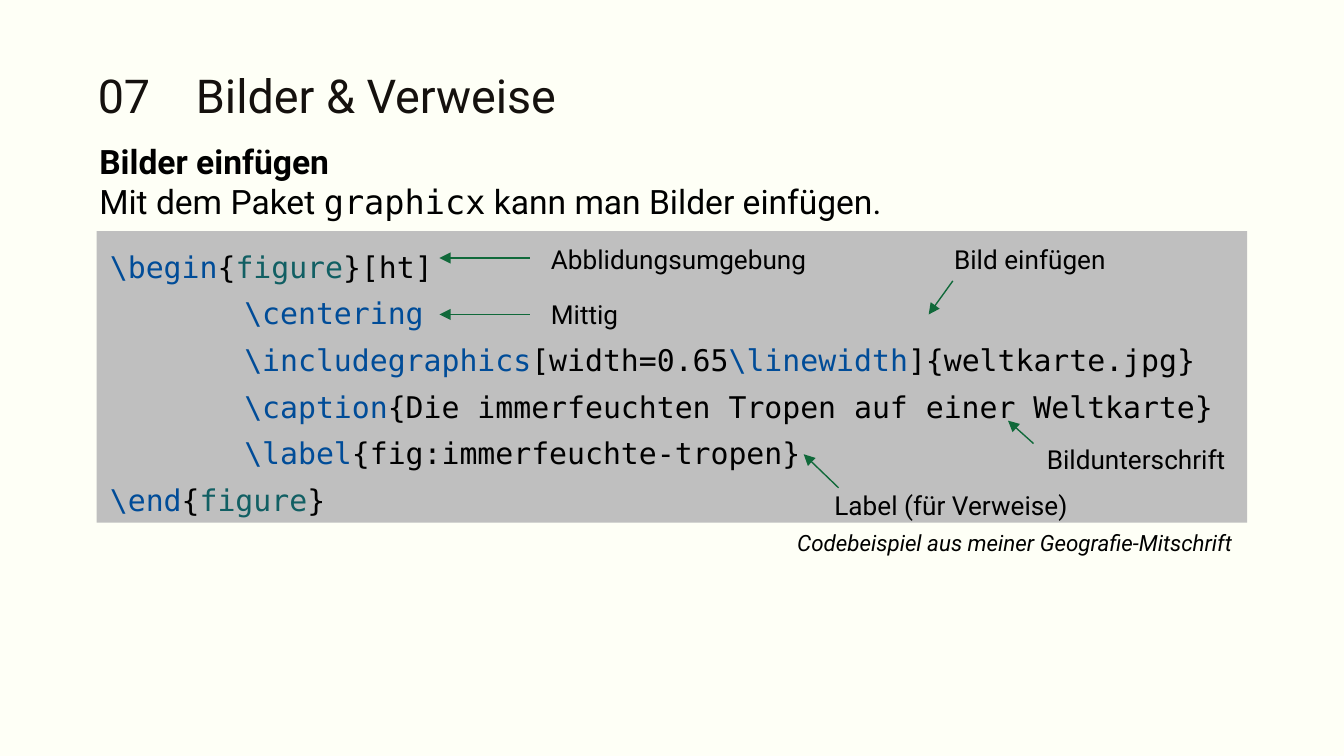
from lxml import etree
from pptx import Presentation
from pptx import util as u
from pptx.dml.color import RGBColor
from pptx.enum import shapes, text
from pptx.oxml import ns


class Theme:
    background = "FEFFF6"
    ink = "000000"
    heading = "15110E"
    panel = "BFBFBF"
    command = "004C98"
    environment = "115F63"
    arrow = "10693A"
    sans = "Roboto"
    mono = "DejaVu Sans Mono"
    title_size = 25
    body_size = 18
    code_size = 16
    label_size = 14
    source_size = 12


# Boxes are (left, top, width, height) in inches.
TITLES = [
    ("Bilder & Verweise", (1.36, 0.4, 7.71, 0.6)),
    ("07", (0.63, 0.4, 0.73, 0.6)),
]
SUBTITLE = "Bilder einfügen"
INTRO = [
    ("Mit dem Paket ", Theme.sans),
    ("graphicx", Theme.mono),
    (" kann man Bilder einfügen.", Theme.sans),
]
INTRO_BOX = (0.64, 1, 8.72, 0.71)
CODE_BOX = (0.72, 1.72, 8.56, 2.17)
CODE_TAB = 1
CODE = [
    [("\\begin", Theme.command), ("{", Theme.ink),
     ("figure", Theme.environment), ("}[ht]", Theme.ink)],
    [("\t\\centering", Theme.command)],
    [("\t\\includegraphics", Theme.command), ("[width=0.65", Theme.ink),
     ("\\linewidth", Theme.command), ("]{weltkarte.jpg}", Theme.ink)],
    [("\t\\caption", Theme.command),
     ("{Die immerfeuchten Tropen auf einer Weltkarte}", Theme.ink)],
    [("\t\\label", Theme.command), ("{fig:immerfeuchte-tropen}", Theme.ink)],
    [("\\end", Theme.command), ("{", Theme.ink),
     ("figure", Theme.environment), ("}", Theme.ink)],
]
SOURCE = "Codebeispiel aus meiner Geografie-Mitschrift"
SOURCE_BOX = (3.94, 3.89, 5.33, 0.3)
# Label, its left and top, arrow start, arrow tip
ANNOTATIONS = [
    ("Abblidungsumgebung", (4, 1.76), (3.94, 1.92), (3.27, 1.92)),
    ("Mittig", (4, 2.17), (3.94, 2.34), (3.27, 2.34)),
    ("Bild einfügen", (7, 1.76), (7.09, 2.09), (6.91, 2.34)),
    ("Bildunterschrift", (7.69, 3.25), (7.69, 3.3), (7.5, 3.13)),
    ("Label (für Verweise)", (6.11, 3.59), (6.24, 3.63), (5.98, 3.38)),
]
LABEL_SIZE = (2.35, 0.34)


def inches(values):
    return [u.Inches(value) for value in values]


def color(value):
    return RGBColor.from_string(value)


def set_font(font, size, name=Theme.sans, ink=Theme.ink):
    font.size = u.Pt(size)
    font.name = name
    font.color.rgb = color(ink)


def add_text(slide, box, content, size, ink=Theme.ink):
    """Add a one-paragraph text box and return its text frame."""
    frame = slide.shapes.add_textbox(*inches(box)).text_frame
    frame.word_wrap = True
    paragraph = frame.paragraphs[0]
    paragraph.text = content
    set_font(paragraph.font, size, ink=ink)
    return frame


def add_intro(slide):
    frame = add_text(slide, INTRO_BOX, SUBTITLE, Theme.body_size)
    frame.paragraphs[0].font.bold = True
    paragraph = frame.add_paragraph()
    set_font(paragraph.font, Theme.body_size)
    for content, name in INTRO:
        run = paragraph.add_run()
        run.text = content
        run.font.name = name


def add_code(slide):
    panel = slide.shapes.add_shape(
        shapes.MSO_SHAPE.RECTANGLE, *inches(CODE_BOX))
    panel.shadow.inherit = False
    panel.fill.solid()
    panel.fill.fore_color.rgb = color(Theme.panel)
    panel.line.fill.background()
    frame = panel.text_frame
    frame.word_wrap = True
    frame.vertical_anchor = text.MSO_ANCHOR.TOP
    for index, line in enumerate(CODE):
        paragraph = frame.add_paragraph() if index else frame.paragraphs[0]
        paragraph.alignment = text.PP_ALIGN.LEFT
        paragraph.line_spacing = 1.3
        properties = paragraph._p.get_or_add_pPr()
        properties.set("defTabSz", str(u.Inches(CODE_TAB)))
        tabs = etree.SubElement(properties, ns.qn("a:tabLst"))
        etree.SubElement(tabs, ns.qn("a:tab"),
                         pos=str(u.Inches(CODE_TAB)), algn="l")
        set_font(paragraph.font, Theme.code_size, Theme.mono)
        for content, ink in line:
            run = paragraph.add_run()
            run.text = content
            run.font.color.rgb = color(ink)


def add_arrow(slide, start, tip):
    arrow = slide.shapes.add_connector(
        shapes.MSO_CONNECTOR.STRAIGHT, *inches(start + tip))
    arrow.line.color.rgb = color(Theme.arrow)
    arrow.line.width = u.Pt(0.75)
    etree.SubElement(arrow.line._get_or_add_ln(), ns.qn("a:tailEnd"),
                     type="triangle")
    etree.SubElement(arrow._element.spPr, ns.qn("a:effectLst"))


def main():
    presentation = Presentation()
    presentation.slide_width = u.Inches(10)
    presentation.slide_height = presentation.slide_width * 9 // 16
    slide = presentation.slides.add_slide(presentation.slide_layouts[6])
    slide.background.fill.solid()
    slide.background.fill.fore_color.rgb = color(Theme.background)

    add_intro(slide)
    add_code(slide)
    for content, box in TITLES:
        frame = add_text(slide, box, content, Theme.title_size, Theme.heading)
        frame.margin_top = frame.margin_bottom = u.Inches(0.1)
    source = add_text(slide, SOURCE_BOX, SOURCE, Theme.source_size)
    source.paragraphs[0].alignment = text.PP_ALIGN.RIGHT
    source.paragraphs[0].font.italic = True
    for label, position, start, tip in ANNOTATIONS:
        add_arrow(slide, start, tip)
        add_text(slide, position + LABEL_SIZE, label, Theme.label_size)
    presentation.save("out.pptx")


if __name__ == "__main__":
    main()
